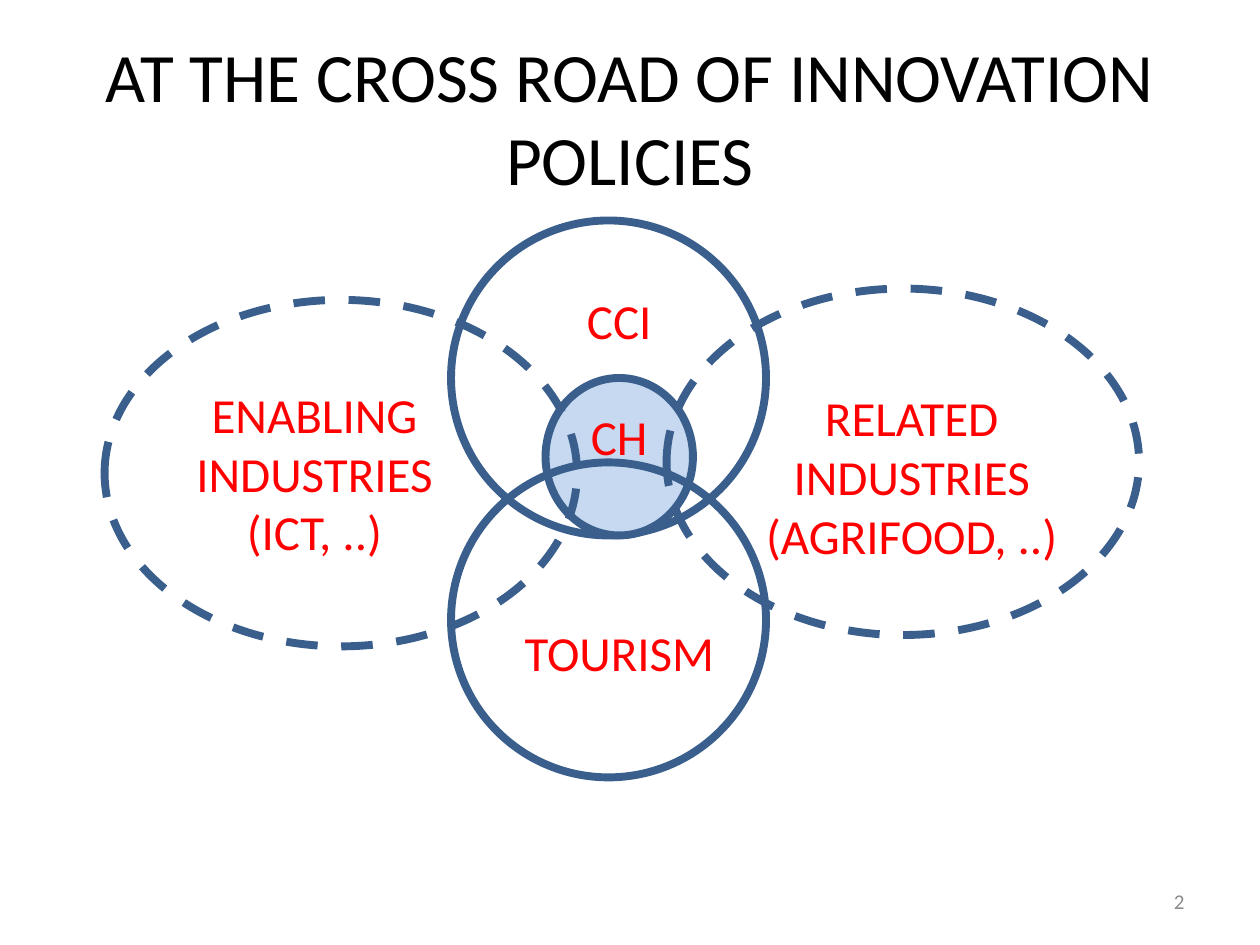
from pptx import Presentation
from pptx import util as u
from pptx.dml.color import RGBColor
from pptx.enum import dml, shapes, text

OUTLINE = "3A5F8C"
LABEL = "FF0000"


def color(value):
    return RGBColor.from_string(value)


def add_text(wording, left, top, width, height, size, font_color,
             align=text.PP_ALIGN.CENTER, anchor=text.MSO_ANCHOR.TOP):
    box = slide.shapes.add_textbox(u.Inches(left), u.Inches(top),
                                   u.Inches(width), u.Inches(height))
    frame = box.text_frame
    frame.word_wrap = True
    frame.vertical_anchor = anchor
    paragraph = frame.paragraphs[0]
    paragraph.text = wording
    paragraph.alignment = align
    paragraph.font.name = "Calibri"
    paragraph.font.size = u.Pt(size)
    paragraph.font.color.rgb = color(font_color)


presentation = Presentation()
presentation.slide_width = u.Inches(10)
presentation.slide_height = u.Inches(7.5)
slide = presentation.slides.add_slide(presentation.slide_layouts[6])

add_text("AT THE CROSS ROAD OF INNOVATION POLICIES", 0.5, 0.3, 9, 1.25,
         39.6, "000000", anchor=text.MSO_ANCHOR.MIDDLE)
add_text("2", 7.17, 6.95, 2.33, 0.4, 12, "8C8C8C",
         text.PP_ALIGN.RIGHT, text.MSO_ANCHOR.MIDDLE)

# left, top, width, height, fill, dashed
ellipses = [
    (3.58, 1.75, 2.5, 2.5, None, False),
    (4.33, 3, 1.17, 1.25, "C6D9F1", False),
    (3.58, 3.67, 2.5, 2.5, None, False),
    (0.83, 2.38, 3.75, 2.75, None, True),
    (5.29, 2.29, 3.75, 2.75, None, True),
]
for left, top, width, height, fill, dashed in ellipses:
    ellipse = slide.shapes.add_shape(
        shapes.MSO_SHAPE.OVAL, u.Inches(left), u.Inches(top),
        u.Inches(width), u.Inches(height))
    ellipse.shadow.inherit = False
    if fill:
        ellipse.fill.solid()
        ellipse.fill.fore_color.rgb = color(fill)
    else:
        ellipse.fill.background()
    ellipse.line.color.rgb = color(OUTLINE)
    ellipse.line.width = u.Pt(4.5)
    if dashed:
        ellipse.line.dash_style = dml.MSO_LINE.DASH

labels = [
    ("CCI", 4.25, 2.26, 1.33, 0.57),
    ("CH", 4.25, 3.18, 1.33, 0.57),
    ("RELATED INDUSTRIES (AGRIFOOD, ..)", 5.86, 3.03, 2.75, 1.51),
    ("ENABLING INDUSTRIES (ICT, ..)", 1.12, 3, 2.75, 1.51),
    ("TOURISM", 4.04, 4.89, 1.75, 0.57),
]
for wording, left, top, width, height in labels:
    add_text(wording, left, top, width, height, 28, LABEL)

presentation.save("out.pptx")
